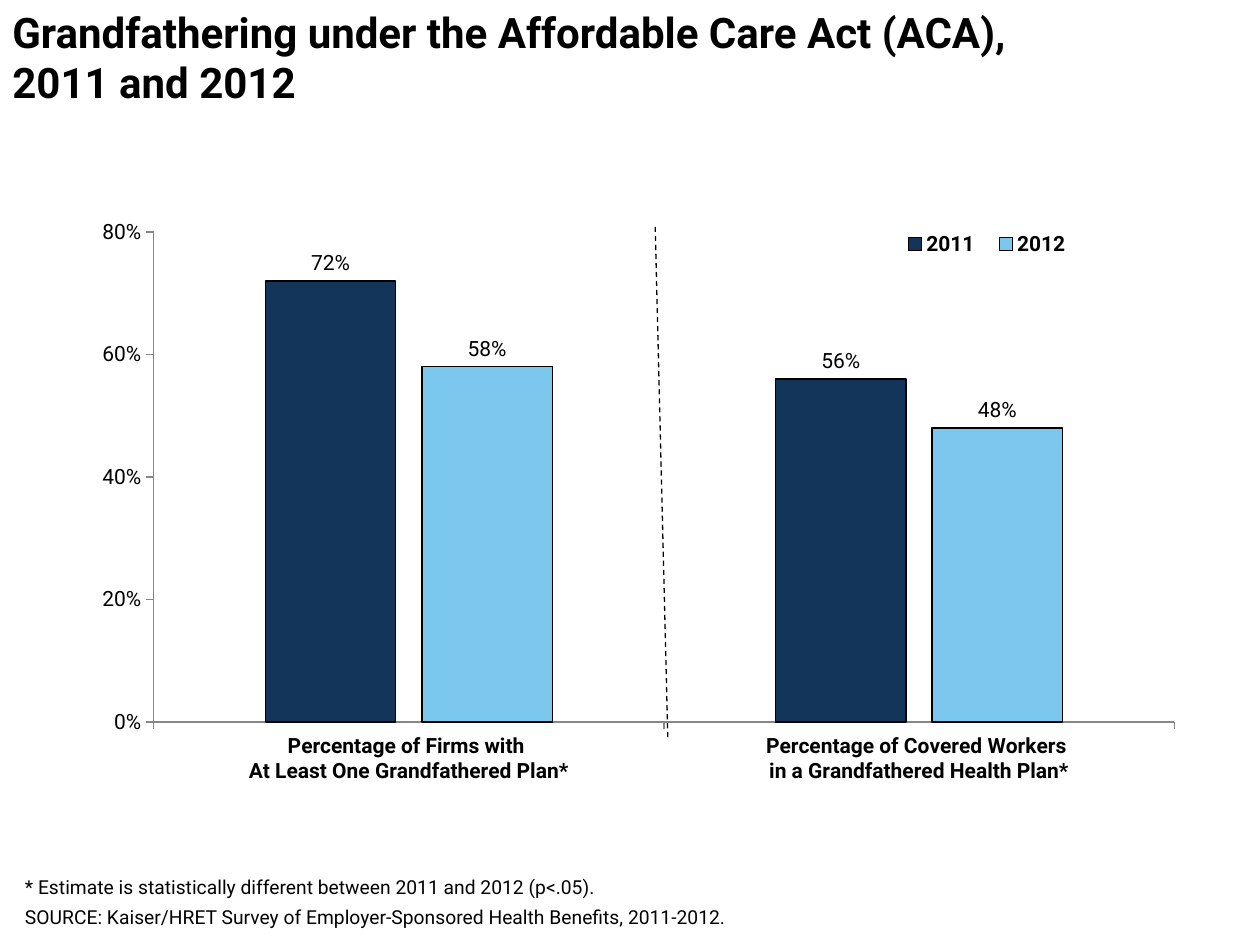
from dataclasses import dataclass

import lxml.etree
import pptx
import pptx.chart.data
import pptx.dml.color
import pptx.enum.chart
import pptx.enum.dml
import pptx.enum.shapes
import pptx.enum.text
import pptx.oxml.ns
import pptx.util


@dataclass(frozen=True)
class Theme:
    font: str = "Roboto"
    ink: str = "000000"
    axis: str = "868686"
    bars: tuple = ("133559", "7BC7ED")
    title_size: int = 24
    chart_size: int = 12
    note_size: int = 11
    hairline: float = 0.75


class SlideBuilder:
    def __init__(self, deck, theme):
        self.deck = deck
        self.theme = theme
        self.page = deck.slides.add_slide(deck.slide_layouts[6])

    def place(self, *shares):
        sizes = (self.deck.slide_width, self.deck.slide_height) * 2
        return [round(share * size) for share, size in zip(shares, sizes)]

    def style_font(self, font, size, bold=False):
        font.name = self.theme.font
        font.size = pptx.util.Pt(size)
        font.bold = bold
        font.color.rgb = pptx.dml.color.RGBColor.from_string(self.theme.ink)

    def style_line(self, line, color):
        line.color.rgb = pptx.dml.color.RGBColor.from_string(color)
        line.width = pptx.util.Pt(self.theme.hairline)

    def text(self, area, content, size, bold=False, after=0,
             anchor=pptx.enum.text.MSO_ANCHOR.TOP):
        box = self.page.shapes.add_textbox(*self.place(*area))
        frame = box.text_frame
        frame.word_wrap = True
        frame.vertical_anchor = anchor
        frame.text = content
        for para in frame.paragraphs:
            para.space_after = pptx.util.Pt(after)
            for span in para.runs:
                self.style_font(span.font, size, bold)

    def dashed_line(self, ends):
        line = self.page.shapes.add_connector(
            pptx.enum.shapes.MSO_CONNECTOR.STRAIGHT, *self.place(*ends))
        self.style_line(line.line, self.theme.ink)
        line.line.dash_style = pptx.enum.dml.MSO_LINE.DASH
        properties = line._element.spPr
        lxml.etree.SubElement(properties, pptx.oxml.ns.qn("a:effectLst"))

    def fix_layout(self, element, index, shares, inner=False):
        qn = pptx.oxml.ns.qn
        for old in element.findall(qn("c:layout")):
            element.remove(old)
        layout = lxml.etree.Element(qn("c:layout"))
        manual = lxml.etree.SubElement(layout, qn("c:manualLayout"))
        settings = [("layoutTarget", "inner")] if inner else []
        settings += [("xMode", "edge"), ("yMode", "edge")]
        settings += zip("xywh", shares)
        for name, value in settings:
            lxml.etree.SubElement(manual, qn(f"c:{name}"), val=str(value))
        element.insert(index, layout)

    def style_axis(self, axis, bold=False):
        axis.has_major_gridlines = False
        axis.major_tick_mark = pptx.enum.chart.XL_TICK_MARK.OUTSIDE
        axis.minor_tick_mark = pptx.enum.chart.XL_TICK_MARK.NONE
        self.style_line(axis.format.line, self.theme.axis)
        self.style_font(axis.tick_labels.font, self.theme.chart_size, bold)

    def column_chart(self, area, categories, series, plot_area, legend_area):
        data = pptx.chart.data.CategoryChartData(number_format="0%")
        data.categories = categories
        for name, values in series.items():
            data.add_series(name, values)
        chart = self.page.shapes.add_chart(
            pptx.enum.chart.XL_CHART_TYPE.COLUMN_CLUSTERED,
            *self.place(*area), data).chart
        self.style_font(chart.font, self.theme.chart_size)
        chart.has_title = False

        self.style_axis(chart.category_axis, bold=True)
        self.style_axis(chart.value_axis)
        chart.value_axis.minimum_scale = 0
        chart.value_axis.maximum_scale = 0.8
        chart.value_axis.major_unit = 0.2
        chart.value_axis.tick_labels.number_format = "0%"
        chart.value_axis.tick_labels.number_format_is_linked = False

        plot = chart.plots[0]
        plot.gap_width = 171
        plot.overlap = -20
        plot.vary_by_categories = False
        for bars, color in zip(plot.series, self.theme.bars):
            bars.format.fill.solid()
            bars.format.fill.fore_color.rgb = pptx.dml.color.RGBColor.from_string(color)
            self.style_line(bars.format.line, self.theme.ink)
            labels = bars.data_labels
            labels.show_value = True
            labels.number_format = "0%"
            labels.number_format_is_linked = False
            labels.position = pptx.enum.chart.XL_LABEL_POSITION.OUTSIDE_END
            self.style_font(labels.font, self.theme.chart_size)

        chart.has_legend = True
        chart.legend.position = pptx.enum.chart.XL_LEGEND_POSITION.TOP
        chart.legend.include_in_layout = False
        self.style_font(chart.legend.font, self.theme.chart_size, True)
        self.fix_layout(chart._chartSpace.chart.plotArea, 0, plot_area, inner=True)
        self.fix_layout(chart.legend._element, 1, legend_area)


def main():
    deck = pptx.Presentation()
    deck.slide_width = pptx.util.Inches(10)
    deck.slide_height = pptx.util.Inches(7.5)
    theme = Theme()
    builder = SlideBuilder(deck, theme)
    builder.text(
        (0, 0, 1, 0.12),
        "Grandfathering under the Affordable Care Act (ACA), \v2011 and 2012",
        theme.title_size, bold=True, anchor=pptx.enum.text.MSO_ANCHOR.MIDDLE)
    builder.text(
        (0.01, 0.92, 0.95, 0.07),
        "* Estimate is statistically different between 2011 and 2012 (p<.05).\n"
        "SOURCE: Kaiser/HRET Survey of Employer-Sponsored Health Benefits, 2011-2012.",
        theme.note_size, after=4)
    builder.column_chart(
        (0.05, 0.22, 0.9, 0.64),
        ["Percentage of Firms with \nAt Least One Grandfathered Plan*",
         "Percentage of Covered Workers \nin a Grandfathered Health Plan*"],
        {"2011": (0.72, 0.56), "2012": (0.58, 0.48)},
        plot_area=(0.08, 0.04, 0.9, 0.81),
        legend_area=(0.73, 0.03, 0.17, 0.06))
    builder.dashed_line((0.52, 0.24, 0.53, 0.78))
    deck.save("out.pptx")


if __name__ == "__main__":
    main()
